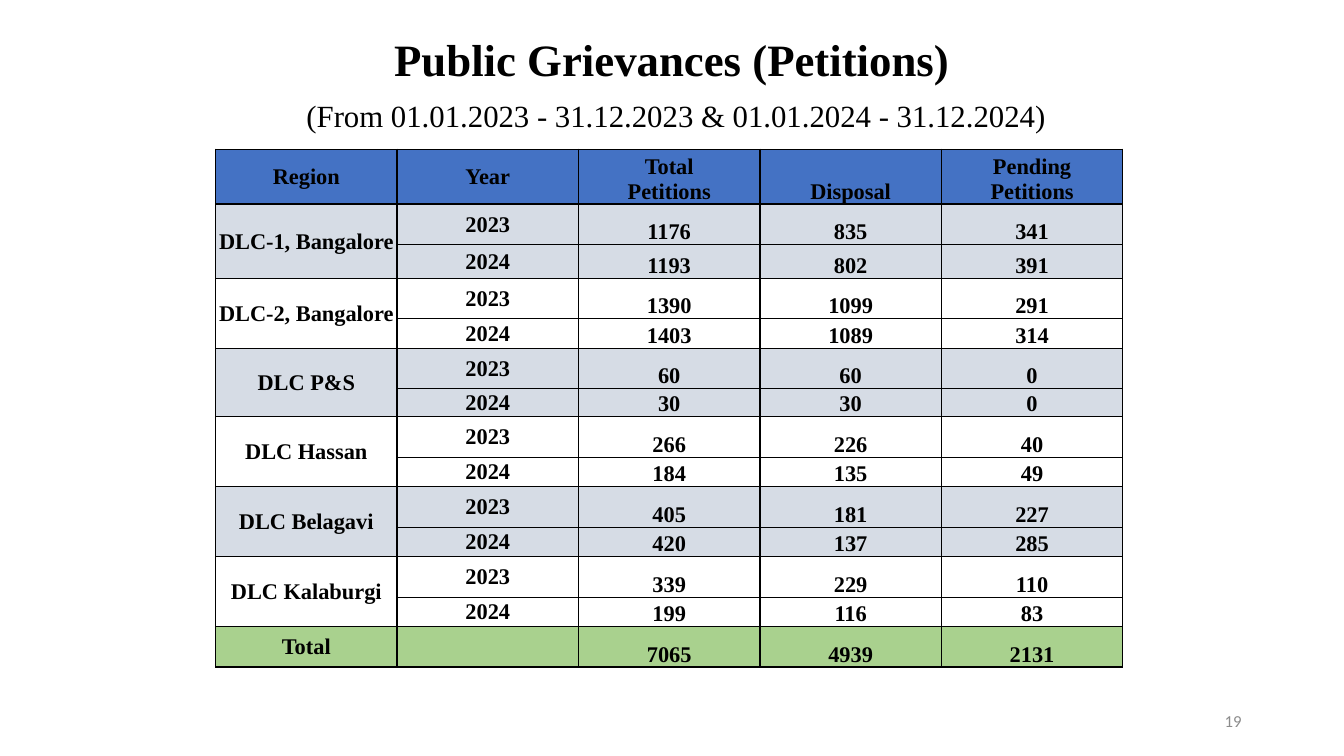
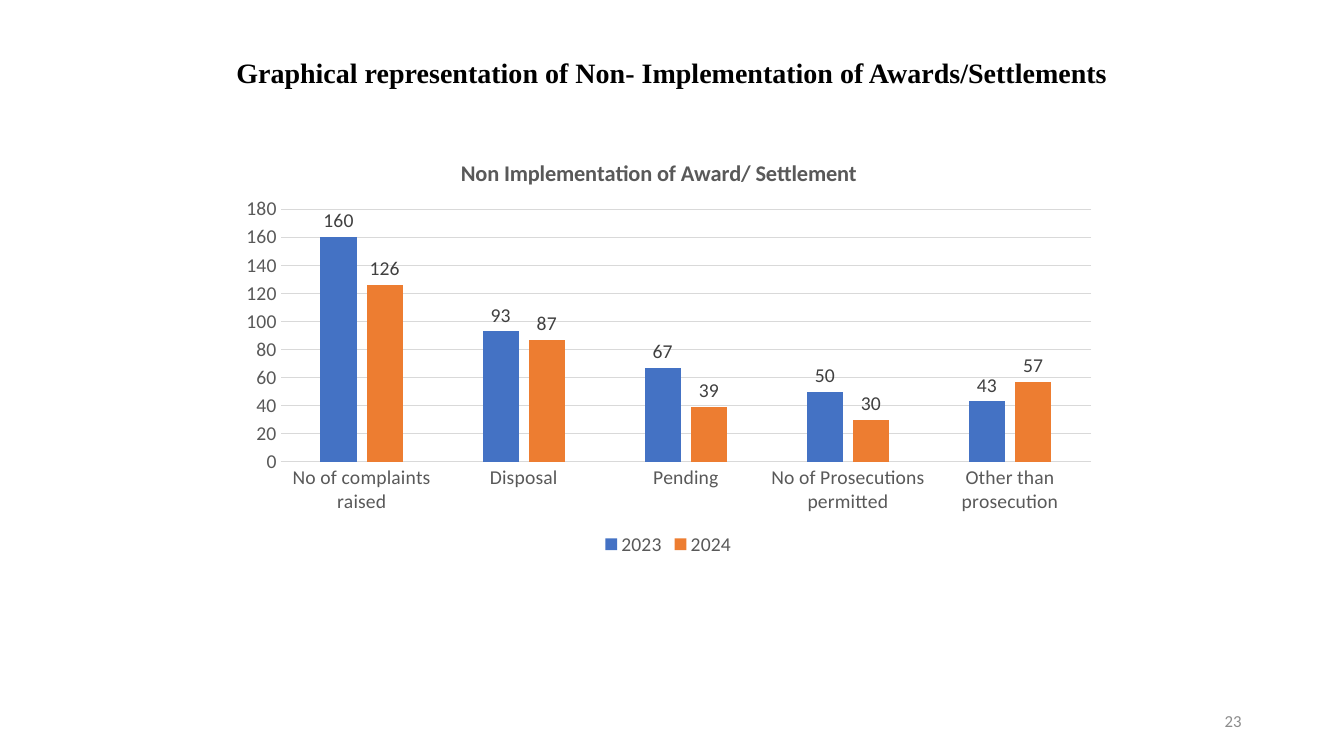
from pptx import Presentation
from pptx.chart.data import CategoryChartData
from pptx.dml.color import RGBColor
from pptx.enum.chart import XL_CHART_TYPE, XL_LABEL_POSITION, XL_LEGEND_POSITION, XL_TICK_MARK
from pptx.enum.text import MSO_ANCHOR, PP_ALIGN
from pptx.oxml import parse_xml
from pptx.oxml.ns import nsdecls, qn
from pptx.util import Pt

CENTER, RIGHT = PP_ALIGN.CENTER, PP_ALIGN.RIGHT
MIDDLE, BOTTOM = MSO_ANCHOR.MIDDLE, MSO_ANCHOR.BOTTOM
COLUMNS = XL_CHART_TYPE.COLUMN_CLUSTERED
NO_TICK = XL_TICK_MARK.NONE
OUTSIDE = XL_LABEL_POSITION.OUTSIDE_END
LEGEND_BOTTOM = XL_LEGEND_POSITION.BOTTOM

SERIF, SANS = "Times New Roman", "Calibri"
BLACK, WHITE, BLUE, ORANGE = "000000", "FFFFFF", "4472C4", "ED7D31"
BAND, GREEN = "D6DCE5", "A9D18E"
GRID, AXIS_TEXT, LABEL_TEXT, PAGE_TEXT = "D9D9D9", "595959", "404040", "8C8C8C"

HEADER = ["Region", "Year", "Total\nPetitions", "Disposal", "Pending\nPetitions"]
REGIONS = [
    ("DLC-1, Bangalore", 24, (1176, 835, 341), (1193, 802, 391)),
    ("DLC-2, Bangalore", 21, (1390, 1099, 291), (1403, 1089, 314)),
    ("DLC P&S", 19.5, (60, 60, 0), (30, 30, 0)),
    ("DLC Hassan", 21, (266, 226, 40), (184, 135, 49)),
    ("DLC Belagavi", 21, (405, 181, 227), (420, 137, 285)),
    ("DLC Kalaburgi", 21, (339, 229, 110), (199, 116, 83)),
]
TOTALS = ["Total", "", 7065, 4939, 2131]
HEADER_HEIGHT, ROW_HEIGHT, COLUMN_WIDTH = 39, 29, 129.6

CATEGORIES = ["No of complaints raised", "Disposal", "Pending",
              "No of Prosecutions permitted", "Other than prosecution"]
SERIES = [("2023", (160, 93, 67, 50, 43), BLUE), ("2024", (126, 87, 39, 30, 57), ORANGE)]


def rgb(value):
    """Return the colour for a hex string."""
    return RGBColor.from_string(value)


def set_font(font, name, size, color, bold=False):
    """Style a font."""
    font.name, font.size, font.bold = name, Pt(size), bold
    font.color.rgb = rgb(color)


def add_run(p, text, *style):
    """Add one styled run to a paragraph."""
    r = p.add_run()
    r.text = text
    set_font(r.font, *style)


def add_text(s, box, lines, align, spacing=1.0):
    """Add a middle-anchored text box with one paragraph per (text, space before, style)."""
    tf = s.shapes.add_textbox(*map(Pt, box)).text_frame
    tf.word_wrap = True
    tf.vertical_anchor = MIDDLE
    for i, (text, before, *style) in enumerate(lines):
        p = tf.add_paragraph() if i else tf.paragraphs[0]
        p.alignment, p.line_spacing, p.space_before = align, spacing, Pt(before)
        add_run(p, text, *style)


def add_slide(prs, top, height, title_lines, number):
    """Add a blank slide with a centred title and its page number."""
    s = prs.slides.add_slide(prs.slide_layouts[6])
    add_text(s, (156, top, 648, height), title_lines, CENTER, 0.9)
    add_text(s, (678, 500.4, 216, 28.8), [(number, 0, SANS, 12, PAGE_TEXT)], RIGHT)
    return s


def fill_cell(cell, text, fill, anchor):
    """Write a bordered, filled table cell."""
    cell.margin_left = cell.margin_right = cell.margin_top = Pt(0.7)
    cell.margin_bottom = Pt(0)
    cell.vertical_anchor = anchor
    tc_pr = cell._tc.get_or_add_tcPr()
    for side in ("lnL", "lnR", "lnT", "lnB"):
        tc_pr.append(parse_xml(
            f'<a:{side} {nsdecls("a")} w="{Pt(1)}"><a:solidFill>'
            f'<a:srgbClr val="{BLACK}"/></a:solidFill></a:{side}>'))
    cell.fill.solid()
    cell.fill.fore_color.rgb = rgb(fill)
    p = cell.text_frame.paragraphs[0]
    p.alignment = CENTER
    for i, line in enumerate(str(text).split("\n")):
        if i:
            p.add_line_break()
        add_run(p, line, SERIF, 16, BLACK, True)


def add_petitions_table(s):
    """Add the petitions table with two year rows per region."""
    rows = [(HEADER_HEIGHT, BLUE, HEADER)]
    for i, (region, height, first, second) in enumerate(REGIONS):
        fill = WHITE if i % 2 else BAND
        rows.append((ROW_HEIGHT, fill, [region, "2023", *first]))
        rows.append((height, fill, ["", "2024", *second]))
    rows.append((ROW_HEIGHT, GREEN, TOTALS))
    width, height = COLUMN_WIDTH * len(HEADER), sum(row[0] for row in rows)
    table = s.shapes.add_table(len(rows), len(HEADER), Pt(154), Pt(106.6),
                               Pt(width), Pt(height)).table
    table.first_row = table.horz_banding = False
    for column in table.columns:
        column.width = Pt(COLUMN_WIDTH)
    for i, (height, fill, values) in enumerate(rows):
        table.rows[i].height = Pt(height)
        for j, value in enumerate(values):
            fill_cell(table.cell(i, j), value, fill, MIDDLE if j < 2 else BOTTOM)
    for i in range(1, len(rows) - 1, 2):
        table.cell(i, 0).merge(table.cell(i + 1, 0))


def set_layout(parent, index, target="", **fractions):
    """Place a chart part by fractions of the chart area."""
    old = parent.find(qn("c:layout"))
    if old is not None:
        parent.remove(old)
    inner = f'<c:layoutTarget val="{target}"/>' if target else ""
    inner += "".join(f'<c:{k}Mode val="edge"/>' for k in fractions if k in "xy")
    inner += "".join(f'<c:{k} val="{v}"/>' for k, v in fractions.items())
    parent.insert(index, parse_xml(
        f'<c:layout {nsdecls("c")}><c:manualLayout>{inner}</c:manualLayout></c:layout>'))


def style_axis(axis):
    """Style the ticks and labels of an axis."""
    axis.major_tick_mark = axis.minor_tick_mark = NO_TICK
    set_font(axis.tick_labels.font, SANS, 14, AXIS_TEXT)


def set_line(line):
    """Make a line thin and light grey."""
    line.color.rgb = rgb(GRID)
    line.width = Pt(0.75)


def add_awards_chart(s):
    """Add the clustered column chart of awards and settlements."""
    data = CategoryChartData()
    data.categories = CATEGORIES
    for name, values, _ in SERIES:
        data.add_series(name, values)
    chart = s.shapes.add_chart(COLUMNS, Pt(162.7), Pt(94.3), Pt(629.3), Pt(306), data).chart
    set_font(chart.font, SANS, 14, BLACK)

    chart.has_title = True
    title = chart.chart_title
    add_run(title.text_frame.paragraphs[0], "Non Implementation of Award/ Settlement",
            SANS, 16, AXIS_TEXT, True)
    set_layout(title.text_frame._element.getparent().getparent().getparent()
               if title.text_frame._element.tag != qn("c:rich")
               else title.text_frame._element.getparent().getparent(), 1, x=0.26, y=0.05)
    plot_area = chart.element.find(qn("c:chart")).find(qn("c:plotArea"))
    set_layout(plot_area, 0, "inner", x=0.06, y=0.18, w=0.92, h=0.59)

    chart.has_legend = True
    chart.legend.position = LEGEND_BOTTOM
    chart.legend.include_in_layout = False
    set_font(chart.legend.font, SANS, 14, AXIS_TEXT)

    style_axis(chart.category_axis)
    set_line(chart.category_axis.format.line)
    axis = chart.value_axis
    style_axis(axis)
    axis.format.line.fill.background()
    axis.minimum_scale, axis.maximum_scale, axis.major_unit = 0, 180, 20
    set_line(axis.major_gridlines.format.line)

    plot = chart.plots[0]
    plot.vary_by_categories = False
    plot.gap_width, plot.overlap = 219, -27
    for series, (_, _, color) in zip(plot.series, SERIES):
        series.format.fill.solid()
        series.format.fill.fore_color.rgb = rgb(color)
        labels = series.data_labels
        labels.show_value = True
        labels.position = OUTSIDE
        set_font(labels.font, SANS, 14, LABEL_TEXT)


def main():
    """Build and save the presentation."""
    prs = Presentation()
    prs.slide_width, prs.slide_height = Pt(960), Pt(540)
    s = add_slide(prs, 11.5, 100, [
        ("Public Grievances (Petitions)", 0, SERIF, 32, BLACK, True),
        (" (From 01.01.2023 - 31.12.2023 & 01.01.2024 - 31.12.2024)", 10, SERIF, 22, BLACK),
    ], "19")
    add_petitions_table(s)
    s = add_slide(prs, 21.6, 62.6, [
        ("Graphical representation of Non- Implementation of Awards/Settlements",
         0, SERIF, 20, BLACK, True),
    ], "23")
    add_awards_chart(s)
    prs.save("out.pptx")


if __name__ == "__main__":
    main()
